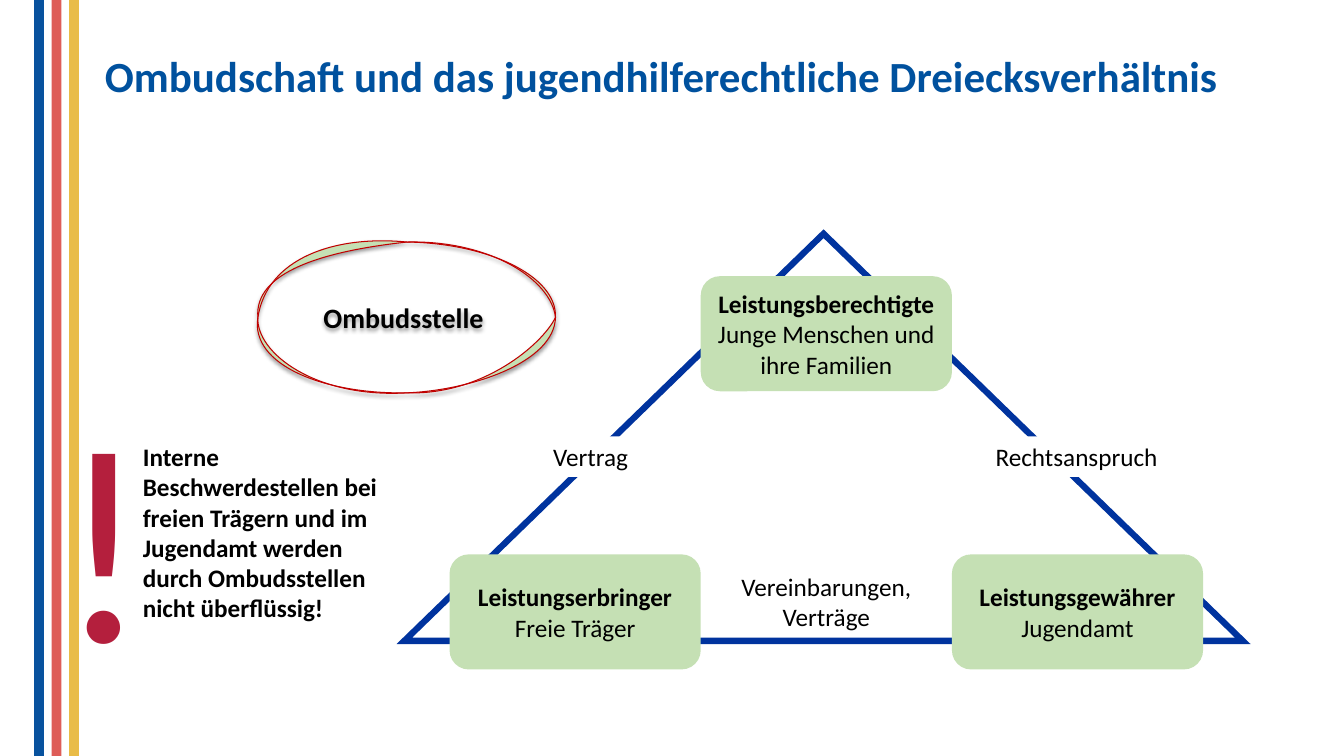
from lxml import etree
from pptx import Presentation
from pptx.dml.color import RGBColor
from pptx.enum.shapes import MSO_SHAPE
from pptx.enum.text import MSO_ANCHOR, PP_ALIGN
from pptx.oxml.ns import qn
from pptx.util import Cm, Pt

RECTANGLE = MSO_SHAPE.RECTANGLE
ROUNDED = MSO_SHAPE.ROUNDED_RECTANGLE
TRIANGLE = MSO_SHAPE.ISOSCELES_TRIANGLE
LEFT, CENTER = PP_ALIGN.LEFT, PP_ALIGN.CENTER
TOP, MIDDLE = MSO_ANCHOR.TOP, MSO_ANCHOR.MIDDLE

PAGE_WIDTH, PAGE_HEIGHT = 33.87, 19.05
FONT = "Calibri"
GREEN = "C5E0B4"

# Two hand-drawn loops around the ombuds office share these four joints;
# each loop has a pair of control points per quarter.
JOINTS = [(0, 1.9), (3.76, 0), (7.5, 1.9), (3.76, 3.8)]
LOOPS = [
    [((-0.1, 0.76), (1.63, 0.23)), ((5.84, -0.05), (7.39, 0.94)),
     ((7.16, 2.59), (5.66, 3.86)), ((1.45, 3.94), (-0.05, 2.79))],
    [((0.23, 0.41), (1.93, -0.18)), ((5.77, 0.03), (7.54, 0.84)),
     ((7.47, 3.02), (5.41, 3.73)), ((1.68, 3.84), (-0.2, 3.1))],
]


def color(hex_code):
    return RGBColor.from_string(hex_code)


def add_text(frame, lines, size=18, bold=False, ink="000000", align=LEFT,
             anchor=TOP, first_bold=False):
    """Write one paragraph per line; first_bold sets the first line bold."""
    frame.word_wrap = True
    frame.vertical_anchor = anchor
    for number, line in enumerate(lines):
        para = frame.add_paragraph() if number else frame.paragraphs[0]
        para.alignment = align
        span = para.add_run()
        span.text = line
        span.font.name = FONT
        span.font.size = Pt(size)
        span.font.bold = bold or (first_bold and number == 0)
        span.font.color.rgb = color(ink)


def paint(shape, fill=None, line=None, width=1):
    shape.shadow.inherit = False
    if fill:
        shape.fill.solid()
        shape.fill.fore_color.rgb = color(fill)
    else:
        shape.fill.background()
    if line:
        shape.line.color.rgb = color(line)
        shape.line.width = Pt(width)
    else:
        shape.line.fill.background()


def add_box(page, kind, box, **style):
    shape = page.shapes.add_shape(kind, *map(Cm, box))
    paint(shape, **style)
    return shape


def add_note(page, box, lines, **text_format):
    frame = page.shapes.add_textbox(*map(Cm, box)).text_frame
    add_text(frame, lines, **text_format)


def add_stripes(page, master, left, top, height):
    """Draw the stripes and move them to the back of the slide master."""
    master_tree = master.element.cSld.spTree
    for number, fill in enumerate(("08529E", "DE5D58", "E9BC48")):
        stripe = add_box(page, RECTANGLE, (left + 0.44 * number, top, 0.25, height),
                         fill=fill)
        stripe.element.nvSpPr.cNvPr.set("id", str(101 + number))
        master_tree.insert(2 + number, stripe.element)


def add_title(page, box, text):
    title = page.shapes.title
    title.left, title.top, title.width, title.height = map(Cm, box)
    add_text(title.text_frame, [text], size=30.7, bold=True, ink="00519E",
             anchor=MIDDLE)
    title.text_frame.paragraphs[0].line_spacing = 0.9


def bend_outline(shape):
    """Turn the straight quarters of both loops into cubic curves."""
    quarters = list(shape.element.iter(qn("a:lnTo")))
    controls = [pair for loop in LOOPS for pair in loop]
    for quarter, pair in zip(quarters, controls):
        curve = etree.Element(qn("a:cubicBezTo"))
        for x, y in pair:
            etree.SubElement(curve, qn("a:pt"), x=str(Cm(x)), y=str(Cm(y)))
        curve.append(quarter.find(qn("a:pt")))
        quarter.getparent().replace(quarter, curve)


def add_soft_shadow(shape):
    effects = shape.element.spPr.find(qn("a:effectLst"))
    shadow = etree.SubElement(
        effects, qn("a:outerShdw"), blurRad=str(Pt(3.1)), dist=str(Pt(1.6)),
        dir="5400000", algn="ctr", rotWithShape="0")
    black = etree.SubElement(shadow, qn("a:srgbClr"), val="000000")
    etree.SubElement(black, qn("a:alpha"), val="38000")


def add_ombuds_office(page, left, top):
    joints = [(Cm(left + x), Cm(top + y)) for x, y in JOINTS]
    start, way_round = joints[0], joints[1:] + joints[:1]
    builder = page.shapes.build_freeform(*start)
    builder.add_line_segments(way_round, close=True)
    builder.move_to(*start)
    builder.add_line_segments(way_round, close=True)
    office = builder.convert_to_shape()
    bend_outline(office)
    paint(office, fill=GREEN, line="C00000", width=0.75)
    add_soft_shadow(office)
    add_text(office.text_frame, ["Ombudsstelle "], size=20, bold=True,
             align=CENTER, anchor=MIDDLE)


def add_triangle_diagram(page, left, top, width, height):
    triangle = add_box(page, TRIANGLE, (left, top, width, height),
                       line="00339E", width=4.5)
    etree.SubElement(triangle.element.spPr.find(qn("a:ln")), qn("a:miter"), lim="800000")
    card_width, card_height = 6.33, 2.9
    first_left, upper, lower = left + 1.14, top + 1.07, top + 8.08
    parties = [
        (1, upper, ["Leistungsberechtigte ", "Junge Menschen und ihre Familien"]),
        (0, lower, ["Leistungserbringer", "Freie Träger"]),
        (2, lower, ["Leistungsgewährer", "Jugendamt"]),
    ]
    for column, card_top, lines in parties:
        card = add_box(page, ROUNDED, (first_left + column * card_width, card_top,
                                       card_width, card_height), fill=GREEN)
        add_text(card.text_frame, lines, first_bold=True, align=CENTER,
                 anchor=MIDDLE)
    relations = [
        (14.65, 5.11, 5.72, 1.02, "Rechtsanspruch", LEFT),
        (3.5, 5.11, 3.15, 1.02, "Vertrag", LEFT),
        (8.22, 8.38, 4.83, 1.78, "Vereinbarungen, Verträge", CENTER),
    ]
    for x, y, label_width, label_height, text, align in relations:
        label = add_box(page, RECTANGLE, (left + x, top + y, label_width, label_height),
                        fill="FFFFFF")
        add_text(label.text_frame, [text], align=align)


def add_warning(page, left, top):
    add_note(page, (left + 2.13, top + 1.96, 6.73, 7.11),
             ["Interne Beschwerdestellen bei freien Trägern und im Jugendamt "
              "werden durch Ombudsstellen nicht überflüssig!"], bold=True)
    add_note(page, (left, top, 2.18, 8.69), ["!"], size=199, ink="B41F3D")


def main():
    deck = Presentation()
    deck.slide_width, deck.slide_height = Cm(PAGE_WIDTH), Cm(PAGE_HEIGHT)
    page = deck.slides.add_slide(deck.slide_layouts.get_by_name("Title Only"))
    add_stripes(page, deck.slide_master, 0.86, 0, PAGE_HEIGHT)
    add_title(page, (2.39, 0.38, 29.79, 3.2),
              "Ombudschaft und das jugendhilferechtliche Dreiecksverhältnis")
    add_triangle_diagram(page, 10.19, 5.89, 21.13, 10.26)
    add_ombuds_office(page, 6.5, 6.1)
    add_warning(page, 1.22, 9.04)
    deck.save("out.pptx")


if __name__ == "__main__":
    main()
